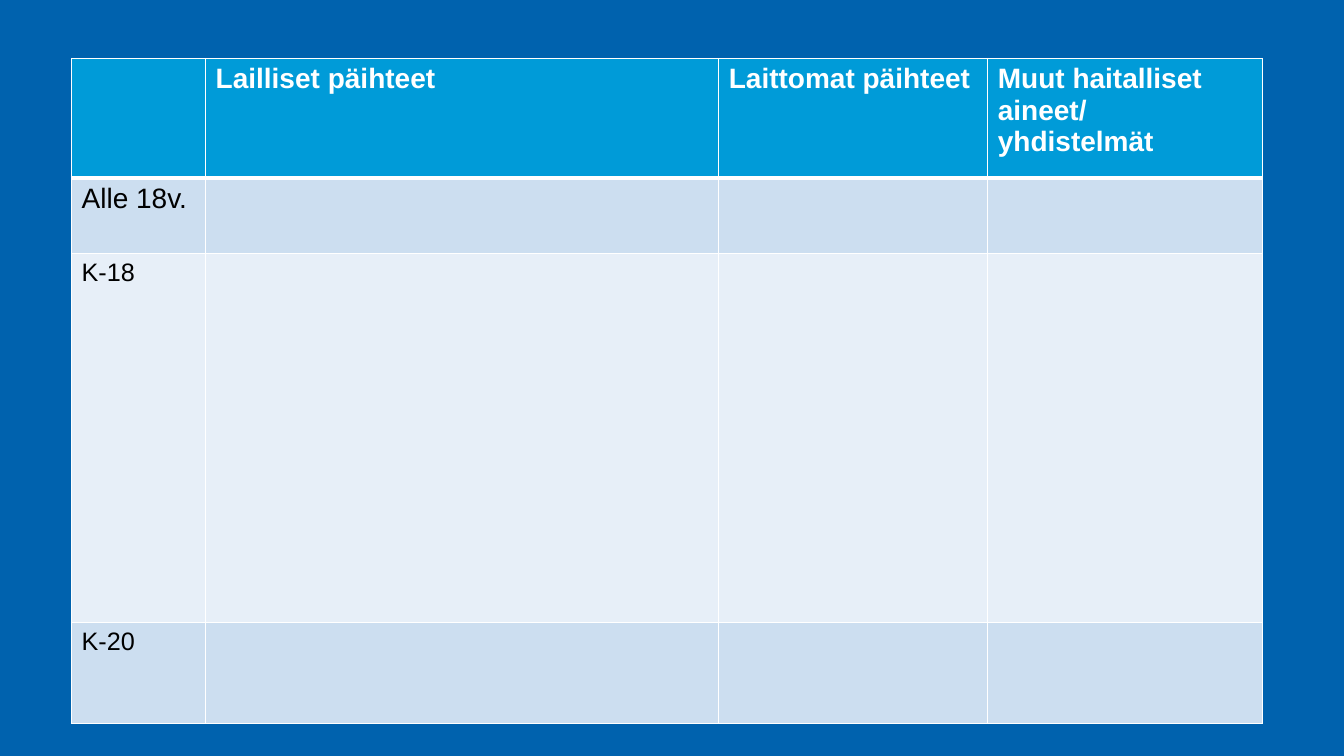
from dataclasses import dataclass

from lxml import etree
from pptx import Presentation
from pptx.dml.color import RGBColor
from pptx.oxml.ns import qn
from pptx.slide import Slide
from pptx.table import _Cell
from pptx.util import Pt

COLORS = {
    "background": "0062AE",
    "header": "009BD8",
    "band_dark": "CCDEF0",
    "band_light": "E7EFF8",
    "white": "FFFFFF",
    "black": "000000",
}
BORDER_SIDES = ("L", "R", "T", "B")
COLUMN_WIDTHS = (95.8, 366.5, 192.2, 196.2)
TABLE_LEFT, TABLE_TOP = 51.1, 41.8


@dataclass(frozen=True)
class SubstanceRow:
    height: float
    fill: str
    text_color: str
    font_size: float
    bold: bool
    texts: tuple[str, ...]
    top_border: float = 1
    bottom_border: float = 1


ROWS = (
    SubstanceRow(85.4, "header", "white", 20, True,
                 ("", "Lailliset päihteet", "Laittomat päihteet",
                  "Muut haitalliset aineet/\nyhdistelmät"), bottom_border=3),
    SubstanceRow(54, "band_dark", "black", 20, False, ("Alle 18v.", "", "", ""), top_border=3),
    SubstanceRow(263.5, "band_light", "black", 18, False, ("K-18", "", "", "")),
    SubstanceRow(72, "band_dark", "black", 18, False, ("K-20", "", "", "")),
)


def color(name: str) -> RGBColor:
    return RGBColor.from_string(COLORS[name])


def add_borders(cell: _Cell, row: SubstanceRow) -> None:
    properties = cell._tc.get_or_add_tcPr()
    widths = {"T": row.top_border, "B": row.bottom_border}
    for side in BORDER_SIDES:
        line = etree.SubElement(properties, qn(f"a:ln{side}"), w=str(Pt(widths.get(side, 1))))
        fill = etree.SubElement(line, qn("a:solidFill"))
        etree.SubElement(fill, qn("a:srgbClr"), val=COLORS["white"])


def format_cell(cell: _Cell, row: SubstanceRow, text: str) -> None:
    add_borders(cell, row)
    cell.fill.solid()
    cell.fill.fore_color.rgb = color(row.fill)
    cell.text = text
    font_format = {"name": "Arial", "size": Pt(row.font_size), "bold": row.bold}
    for paragraph in cell.text_frame.paragraphs:
        for run in paragraph.runs:
            for attribute, value in font_format.items():
                setattr(run.font, attribute, value)
            run.font.color.rgb = color(row.text_color)


def add_substance_table(slide: Slide) -> None:
    table = slide.shapes.add_table(
        len(ROWS), len(COLUMN_WIDTHS), Pt(TABLE_LEFT), Pt(TABLE_TOP),
        Pt(sum(COLUMN_WIDTHS)), Pt(sum(row.height for row in ROWS))).table
    for column, width in zip(table.columns, COLUMN_WIDTHS):
        column.width = Pt(width)
    for table_row, row in zip(table.rows, ROWS):
        table_row.height = Pt(row.height)
        for cell, text in zip(table_row.cells, row.texts):
            format_cell(cell, row, text)


def main() -> None:
    """Build the slide with the table of substances by age limit."""
    presentation = Presentation()
    presentation.slide_width, presentation.slide_height = Pt(960), Pt(540)
    slide = presentation.slides.add_slide(presentation.slide_layouts.get_by_name("Blank"))
    slide.background.fill.solid()
    slide.background.fill.fore_color.rgb = color("background")
    add_substance_table(slide)
    presentation.save("out.pptx")


if __name__ == "__main__":
    main()
